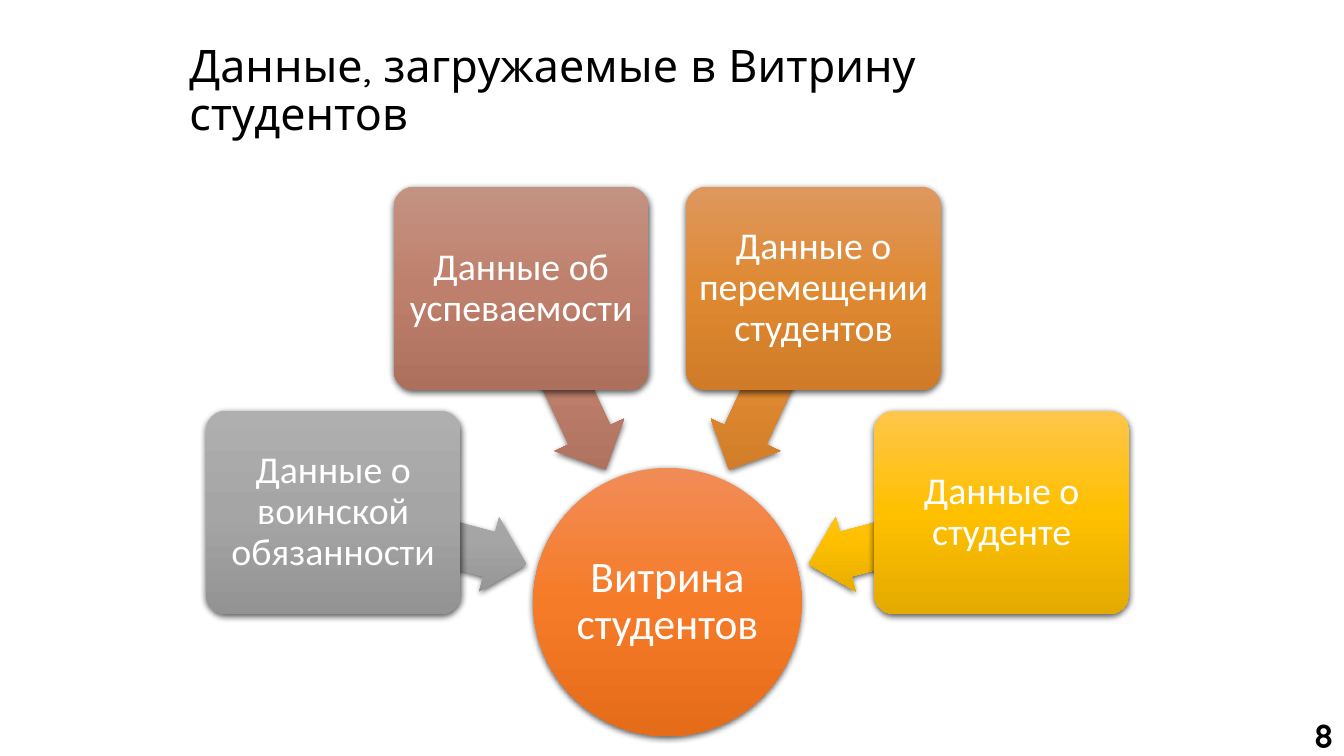
from math import cos, radians, sin

from pptx import Presentation
from pptx.dml.color import RGBColor
from pptx.enum.shapes import MSO_SHAPE
from pptx.enum.text import MSO_ANCHOR, PP_ALIGN
from pptx.oxml import parse_xml
from pptx.oxml.ns import nsdecls
from pptx.util import Cm, Pt

CIRCLE, CARD, ARROW = MSO_SHAPE.OVAL, MSO_SHAPE.ROUNDED_RECTANGLE, MSO_SHAPE.LEFT_ARROW
MIDDLE = MSO_ANCHOR.MIDDLE
LEFT, CENTER, RIGHT = PP_ALIGN.LEFT, PP_ALIGN.CENTER, PP_ALIGN.RIGHT

# Content
TITLE = "Данные, загружаемые в Витрину студентов"
PAGE_NUMBER = "8"
HUB = ("Витрина студентов", ("F18C57", "F67B28", "E56C19"))
SOURCES = [  # text, gradient from top to bottom
    ("Данные о воинской обязанности", ("AFAFAF", "A5A5A5", "939393")),
    ("Данные об успеваемости", ("C39382", "BE806C", "AD705C")),
    ("Данные о перемещении студентов", ("DE985E", "DF8932", "D07B27")),
    ("Данные о студенте", ("FFC64B", "FFC000", "E3AB00")),
]

# Layout in centimetres and degrees
HUB_X, HUB_Y, HUB_SIZE = 16.82, 15.17, 6.76
CARD_SIZE, CARD_RADIUS = (6.43, 5.13), 8.72
ARROW_SIZE, ARROW_RADIUS = (5.03, 1.93), 6.2
FIRST_ANGLE, ANGLE_STEP = 195, 50

# Text formats
TITLE_FONT = {"name": "Quicksand", "size": Pt(32), "bold": False}
NUMBER_FONT = {"name": "Quicksand", "size": Pt(24), "bold": True}
HUB_FONT = {"name": "Calibri", "size": Pt(31)}
CARD_FONT = {"name": "Calibri", "size": Pt(27)}


def rgb(value):
    return RGBColor.from_string(value)


def write(frame, text, font_format, color, align, spacing=0.9):
    frame.word_wrap = True
    frame.text = text
    paragraph = frame.paragraphs[0]
    paragraph.alignment = align
    paragraph.line_spacing = spacing
    for key, value in font_format.items():
        setattr(paragraph.font, key, value)
    paragraph.font.color.rgb = rgb(color)


def write_inside(shape, text, font_format, inset):
    frame = shape.text_frame
    for side in ("left", "top", "right", "bottom"):
        setattr(frame, f"margin_{side}", Cm(inset))
    frame.vertical_anchor = MIDDLE
    write(frame, text, font_format, "FFFFFF", CENTER)


def add_part(slide, kind, center_x, center_y, size, gradient, adjustments=()):
    width, height = size
    shape = slide.shapes.add_shape(kind, Cm(center_x - width / 2), Cm(center_y - height / 2),
                                   Cm(width), Cm(height))
    for index, value in enumerate(adjustments):
        shape.adjustments[index] = value
    # Three-stop vertical gradient
    stops = "".join(f'<a:gs pos="{index * 50000}"><a:srgbClr val="{color}"/></a:gs>'
                    for index, color in enumerate(gradient))
    properties = shape.element.spPr
    properties.append(parse_xml(
        f'<a:gradFill {nsdecls("a")} rotWithShape="0"><a:gsLst>{stops}</a:gsLst>'
        '<a:lin ang="5400000" scaled="0"/></a:gradFill>'))
    shape.line.fill.background()
    # Soft shadow below
    properties.append(parse_xml(
        f'<a:effectLst {nsdecls("a")}><a:outerShdw blurRad="{Pt(4.5)}" dist="{Pt(1.5)}" '
        'dir="5400000" algn="ctr" rotWithShape="0"><a:srgbClr val="000000">'
        '<a:alpha val="63000"/></a:srgbClr></a:outerShdw></a:effectLst>'))
    return shape


def around_hub(angle, radius):
    return HUB_X + radius * cos(radians(angle)), HUB_Y + radius * sin(radians(angle))


def main():
    deck = Presentation()
    deck.slide_width, deck.slide_height = Cm(33.87), Cm(19.05)
    slide = deck.slides.add_slide(deck.slide_layouts[5])

    # Title
    title = slide.shapes.title
    title.left, title.top, title.width, title.height = Cm(4.52), Cm(0.48), Cm(24.56), Cm(3.68)
    title.text_frame.vertical_anchor = MIDDLE
    write(title.text_frame, TITLE, TITLE_FONT, "000000", LEFT)

    # Central circle
    hub_text, hub_gradient = HUB
    hub = add_part(slide, CIRCLE, HUB_X, HUB_Y, (HUB_SIZE, HUB_SIZE), hub_gradient)
    write_inside(hub, hub_text, HUB_FONT, 0.05)

    # Data sources on an arc, each with an arrow towards the circle
    for index, (text, gradient) in enumerate(SOURCES):
        angle = FIRST_ANGLE + index * ANGLE_STEP
        arrow = add_part(slide, ARROW, *around_hub(angle, ARROW_RADIUS), ARROW_SIZE,
                         gradient, (0.6, 0.5))
        arrow.rotation = angle
        card = add_part(slide, CARD, *around_hub(angle, CARD_RADIUS), CARD_SIZE,
                        gradient, (0.1,))
        write_inside(card, text, CARD_FONT, 0.15)

    # Page number
    number = slide.shapes.add_textbox(Cm(31.19), Cm(17.88), Cm(2.67), Cm(1.3))
    write(number.text_frame, PAGE_NUMBER, NUMBER_FONT, "000000", RIGHT, 1.0)

    deck.save("out.pptx")


if __name__ == "__main__":
    main()
